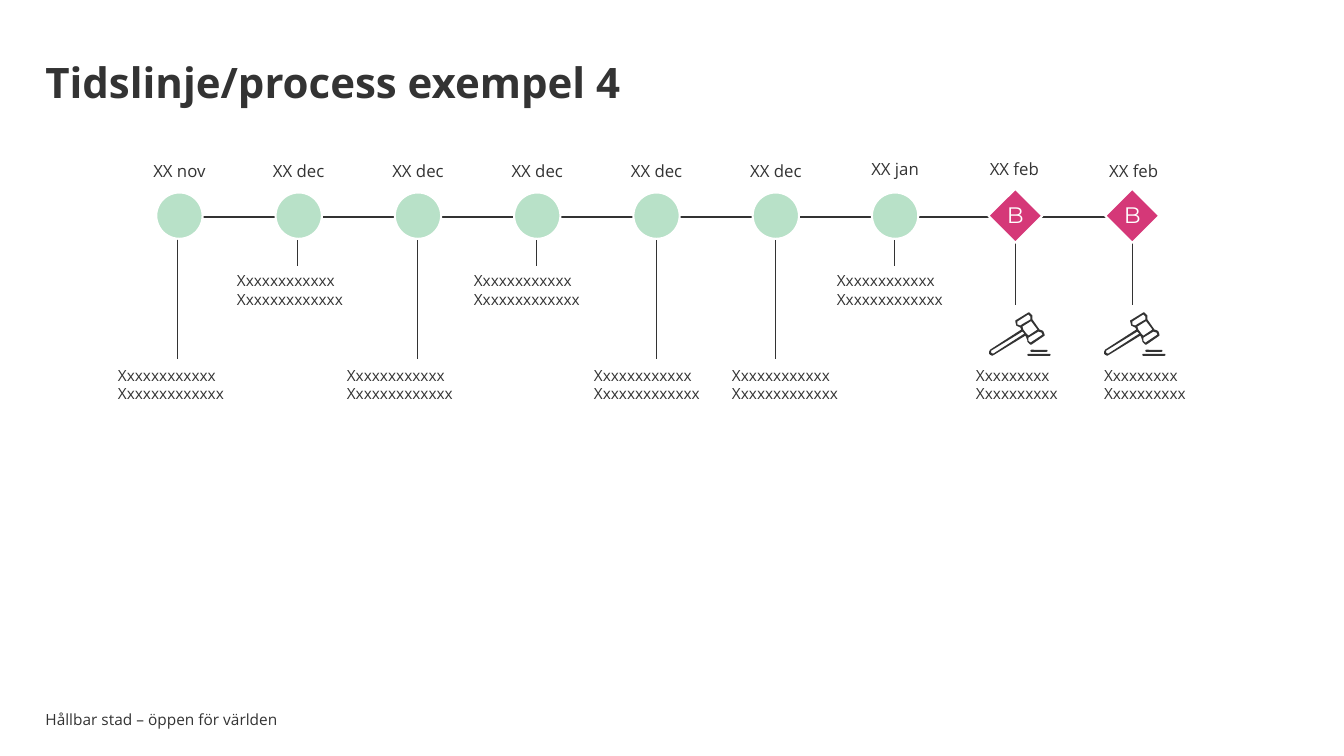
from dataclasses import dataclass
from lxml import etree
from pptx import Presentation
from pptx.dml.color import RGBColor
from pptx.enum import shapes, text
from pptx.oxml.ns import qn
from pptx.util import Inches, Pt


@dataclass(frozen=True)
class Theme:
    ink: str = "333333"
    paper: str = "FFFFFF"
    mint: str = "B8E1C8"
    pink: str = "D53878"
    font: str = "Open Sans"
    mark_font: str = "Montserrat"
    title: float = 30
    mark: float = 16
    date: float = 12
    body: float = 11
    thick: float = 1.5
    thin: float = 0.5


@dataclass(frozen=True)
class Step:
    date: str
    stem: float  # x of the thin line below the mark
    left: float  # caption place and width
    width: float
    low: bool = True  # caption on the lower row
    lift: bool = False  # date set slightly higher
    gavel: float | None = None  # left of the gavel; marks a decision


@dataclass(frozen=True)
class Box:
    left: float
    top: float
    width: float
    height: float


THEME = Theme()
AXIS = 2.15
PITCH = 1.183
DATE_LEFT = 0.96
DOT_LEFT = 1.55
DOT = 0.46
DIAMOND = 0.38
LONG = "Xxxxxxxxxxxx\nXxxxxxxxxxxxx"
SHORT = "Xxxxxxxxx\nXxxxxxxxxx"

STEPS = [
    Step("XX nov", 1.76, 1.17, 1.23),
    Step("XX dec", 2.95, 2.35, 1.23, low=False),
    Step("XX dec", 4.14, 3.44, 1.69),
    Step("XX dec", 5.32, 4.7, 1.23, low=False),
    Step("XX dec", 6.51, 5.89, 1.29),
    Step("XX dec", 7.69, 7.26, 1.68),
    Step("XX jan", 8.87, 8.3, 1.2, low=False, lift=True),
    Step("XX feb", 10.07, 9.68, 1.1, lift=True, gavel=9.81),
    Step("XX feb", 11.23, 10.95, 1.04, gavel=10.95),
]

# Outer edge of the gavel, then its hollows, in hundredths of an inch
GAVEL = [
    [(3, 43), (5, 42), (36, 23), (37, 25), (38, 28), (38, 29), (40, 31), (41, 32),
     (42, 32), (55, 23), (55, 22), (54, 19), (53, 18), (50, 17), (43, 7), (43, 3),
     (40, 0), (39, 0), (26, 8), (26, 9), (27, 13), (31, 15), (32, 17), (1, 37),
     (0, 39), (0, 41), (1, 42)],
    [(34, 17), (33, 14), (41, 9), (42, 9), (48, 17), (39, 23), (37, 21)],
    [(53, 22), (41, 30), (39, 28), (39, 25), (49, 19), (52, 20)],
    [(28, 9), (39, 2), (41, 4), (41, 7), (34, 11), (31, 13), (28, 12)],
    [(2, 39), (2, 38), (33, 19), (35, 21), (4, 41), (2, 40)],
]
GAVEL_TOP = 3.1
BARS = [Box(0.41, 0.37, 0.17, 0.02), Box(0.38, 0.41, 0.23, 0.02)]


def color(code: str) -> RGBColor:
    return RGBColor.from_string(code)


def place(box: Box) -> list[int]:
    return [Inches(v) for v in (box.left, box.top, box.width, box.height)]


def write(slide, box: Box, words: str, size: float, *, pad=(0, 0), font=THEME.font,
          tint=THEME.ink, bold=False, center=False, middle=False, wrap=True):
    """Add a text box; pad is the side and the top inset."""
    frame = slide.shapes.add_textbox(*place(box)).text_frame
    frame.word_wrap = wrap
    frame.margin_left = frame.margin_right = Inches(pad[0])
    frame.margin_top = frame.margin_bottom = Inches(pad[1])
    if middle:
        frame.vertical_anchor = text.MSO_ANCHOR.MIDDLE
    else:
        frame.auto_size = text.MSO_AUTO_SIZE.SHAPE_TO_FIT_TEXT
    frame.text = words
    for par in frame.paragraphs:
        par.alignment = text.PP_ALIGN.CENTER if center else text.PP_ALIGN.LEFT
        for run in par.runs:
            run.font.name = font
            run.font.size = Pt(size)
            run.font.bold = bold
            run.font.color.rgb = color(tint)
    return frame


def rule(slide, x1: float, y1: float, x2: float, y2: float, weight: float) -> None:
    line = slide.shapes.add_connector(
        shapes.MSO_CONNECTOR.STRAIGHT, Inches(x1), Inches(y1), Inches(x2), Inches(y2))
    line.line.color.rgb = color(THEME.ink)
    line.line.width = Pt(weight)
    props = line._element.find(qn("p:spPr"))
    etree.SubElement(props, qn("a:effectLst"))


def paint(shape, fill: str, edge: str | None = None) -> None:
    shape.shadow.inherit = False
    shape.fill.solid()
    shape.fill.fore_color.rgb = color(fill)
    if edge:
        shape.line.color.rgb = color(edge)
        shape.line.width = Pt(THEME.thick)
    else:
        shape.line.fill.background()


def draw_gavel(slide, left: float) -> None:
    group = slide.shapes.add_group_shape()
    outer, *holes = GAVEL
    pen = group.shapes.build_freeform(*outer[0], scale=Inches(0.01))
    pen.add_line_segments(outer[1:], close=True)
    for hole in holes:
        pen.move_to(*hole[0])
        pen.add_line_segments(hole[1:], close=True)
    paint(pen.convert_to_shape(Inches(left), Inches(GAVEL_TOP)), THEME.ink)
    for bar in BARS:
        spot = Box(left + bar.left, GAVEL_TOP + bar.top, bar.width, bar.height)
        shape = group.shapes.add_shape(shapes.MSO_SHAPE.ROUNDED_RECTANGLE, *place(spot))
        shape.adjustments[0] = 0.5
        paint(shape, THEME.ink)


def draw_mark(slide, index: int, step: Step) -> None:
    """Draw a diamond for a decision, else a dot."""
    if step.gavel is None:
        box = Box(DOT_LEFT + index * PITCH, 1.91, DOT, DOT)
        dot = slide.shapes.add_shape(shapes.MSO_SHAPE.OVAL, *place(box))
        paint(dot, THEME.mint, THEME.paper)
        return
    box = Box(step.stem - DIAMOND / 2, 1.95, DIAMOND, DIAMOND)
    tile = slide.shapes.add_shape(shapes.MSO_SHAPE.RECTANGLE, *place(box))
    tile.rotation = 225
    paint(tile, THEME.pink, THEME.paper)
    write(slide, box, "B", THEME.mark, pad=(0.1, 0.05), font=THEME.mark_font,
          tint=THEME.paper, center=True, wrap=False)


def draw_step(slide, index: int, step: Step) -> None:
    top = 1.53 if step.lift else 1.55
    write(slide, Box(DATE_LEFT + index * PITCH, top, 1.64, 0.3), step.date,
          THEME.date, pad=(0.1, 0.05), center=True)
    choice = step.gavel is not None
    end = 3.03 if choice else 3.56 if step.low else 2.64
    rule(slide, step.stem, AXIS, step.stem, end, THEME.thin)
    draw_mark(slide, index, step)
    if choice:
        draw_gavel(slide, step.gavel)
    write(slide, Box(step.left, 3.63 if step.low else 2.69, step.width, 0.37),
          SHORT if choice else LONG, THEME.body)


def main() -> None:
    deck = Presentation()
    deck.slide_width, deck.slide_height = Inches(13.33), Inches(7.5)
    slide = deck.slides.add_slide(deck.slide_layouts[6])
    write(slide, Box(0.45, 7.06, 9.45, 0.16), "Hållbar stad – öppen för världen",
          THEME.body, middle=True)
    title = write(slide, Box(0.45, 0.44, 10.03, 0.81), "Tidslinje/process exempel 4",
                  THEME.title, pad=(0, 0.05), bold=True, middle=True)
    title.paragraphs[0].line_spacing = 0.9
    rule(slide, STEPS[0].stem, AXIS, STEPS[-1].stem, AXIS, THEME.thick)
    for index, step in enumerate(STEPS):
        draw_step(slide, index, step)
    deck.save("out.pptx")


if __name__ == "__main__":
    main()
